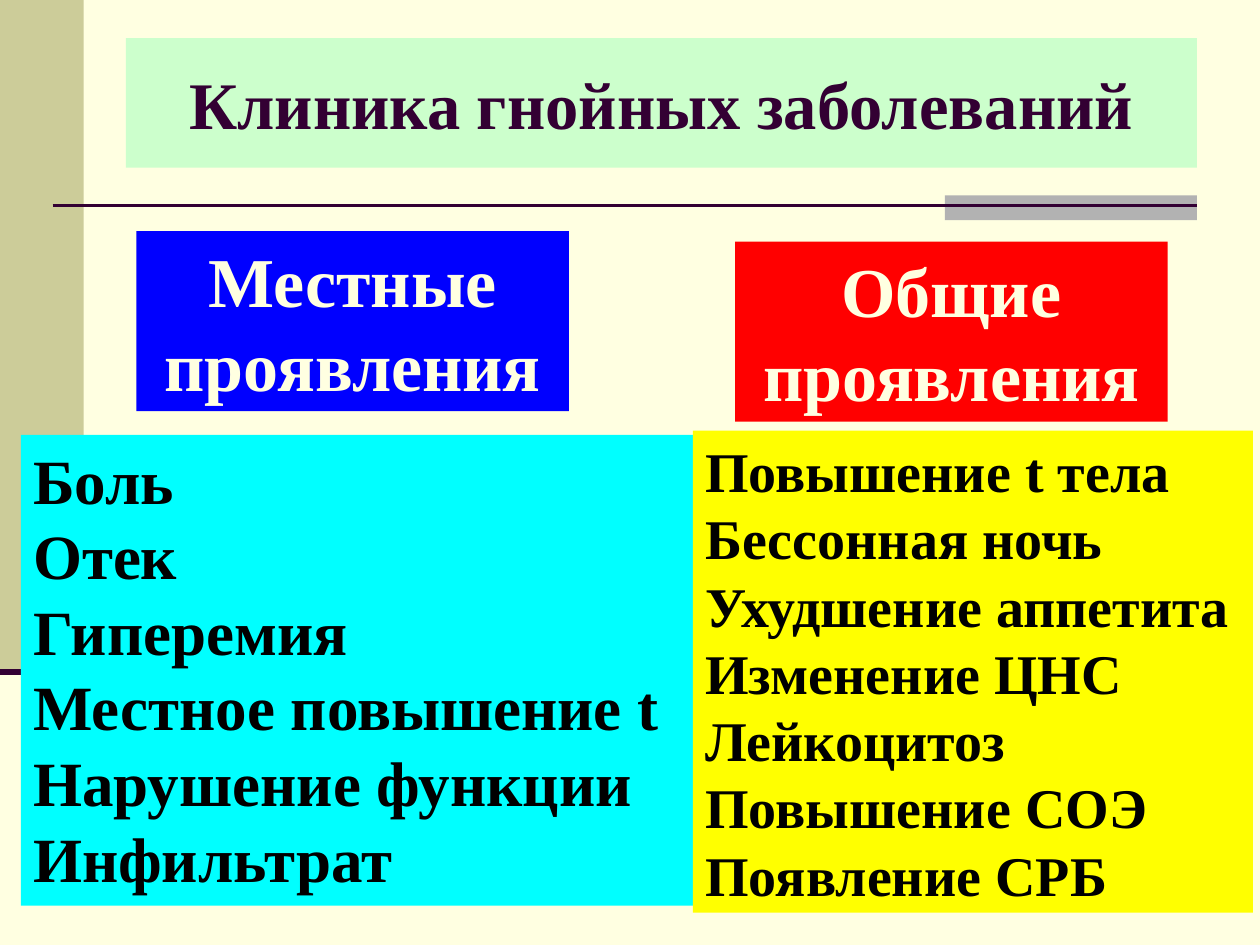
from lxml import etree
from pptx import Presentation
from pptx.dml.color import RGBColor
from pptx.enum.shapes import MSO_CONNECTOR, MSO_SHAPE
from pptx.enum.text import MSO_ANCHOR, PP_ALIGN
from pptx.oxml.ns import qn
from pptx.util import Cm, Pt

RECT = MSO_SHAPE.RECTANGLE
STRAIGHT = MSO_CONNECTOR.STRAIGHT
TOP, MIDDLE = MSO_ANCHOR.TOP, MSO_ANCHOR.MIDDLE
LEFT, CENTER = PP_ALIGN.LEFT, PP_ALIGN.CENTER

CREAM = RGBColor(0xFF, 0xFF, 0xE1)
KHAKI = RGBColor(0xCC, 0xCC, 0x99)
GRAY = RGBColor(0xB2, 0xB2, 0xB2)
PLUM = RGBColor(0x33, 0x00, 0x33)
MINT = RGBColor(0xCC, 0xFF, 0xCC)
BLUE = RGBColor(0x00, 0x00, 0xFF)
RED = RGBColor(0xFF, 0x00, 0x00)
CYAN = RGBColor(0x00, 0xFF, 0xFF)
YELLOW = RGBColor(0xFF, 0xFF, 0x00)
BLACK = RGBColor(0x00, 0x00, 0x00)

LOCAL_SIGNS = ["Боль", "Отек", "Гиперемия", "Местное повышение t",
               "Нарушение функции", "Инфильтрат"]
GENERAL_SIGNS = ["Повышение t тела", "Бессонная ночь", "Ухудшение аппетита",
                 "Изменение ЦНС", "Лейкоцитоз", "Повышение СОЭ",
                 "Появление СРБ"]


class SlideBuilder:
    font = "Times New Roman"
    leading = 1.2

    def __init__(self, slide):
        self.slide = slide
        fill = slide.background.fill
        fill.solid()
        fill.fore_color.rgb = CREAM

    def block(self, x, y, w, h, color):
        sp = self.slide.shapes.add_shape(RECT, Cm(x), Cm(y), Cm(w), Cm(h))
        sp.shadow.inherit = False
        sp.fill.solid()
        sp.fill.fore_color.rgb = color
        sp.line.fill.background()
        return sp

    def rule(self, x1, x2, y, width):
        """Draw a horizontal line."""
        line = self.slide.shapes.add_connector(
            STRAIGHT, Cm(x1), Cm(y), Cm(x2), Cm(y))
        line.line.color.rgb = PLUM
        line.line.width = Pt(width)
        etree.SubElement(line._element.spPr, qn("a:effectLst"))

    def text_block(self, box, fill, lines, size, color,
                   align=LEFT, anchor=TOP):
        tf = self.block(*box, fill).text_frame
        tf.word_wrap = True
        tf.vertical_anchor = anchor
        for i, text in enumerate(lines):
            p = tf.add_paragraph() if i else tf.paragraphs[0]
            p.alignment = align
            p.line_spacing = Pt(size * self.leading)
            r = p.add_run()
            r.text = text
            r.font.name = self.font
            r.font.size = Pt(size)
            r.font.bold = True
            r.font.color.rgb = color


def main():
    prs = Presentation()
    prs.slide_width, prs.slide_height = Cm(25.4), Cm(19.05)
    s = SlideBuilder(prs.slides.add_slide(prs.slide_layouts[6]))

    s.block(0, 0, 1.69, 13.55, KHAKI)
    s.block(19.05, 3.94, 5.08, 0.5, GRAY)
    s.rule(1.06, 24.13, 4.14, 1.5)
    s.rule(0, 1.69, 13.55, 3.5)

    s.text_block((2.54, 0.77, 21.59, 2.61), MINT,
                 ["Клиника гнойных заболеваний"], 38, PLUM, CENTER, MIDDLE)
    s.text_block((2.75, 4.66, 8.72, 3.63), BLUE,
                 ["Местные проявления"], 40, CREAM, CENTER)
    s.text_block((14.82, 4.87, 8.72, 3.63), RED,
                 ["Общие проявления"], 40, CREAM, CENTER)
    s.text_block((0.42, 8.77, 13.76, 9.49), CYAN, LOCAL_SIGNS, 36, BLACK)
    s.text_block((13.97, 8.68, 11.29, 9.72), YELLOW, GENERAL_SIGNS, 32, BLACK)

    prs.save("out.pptx")


if __name__ == "__main__":
    main()
